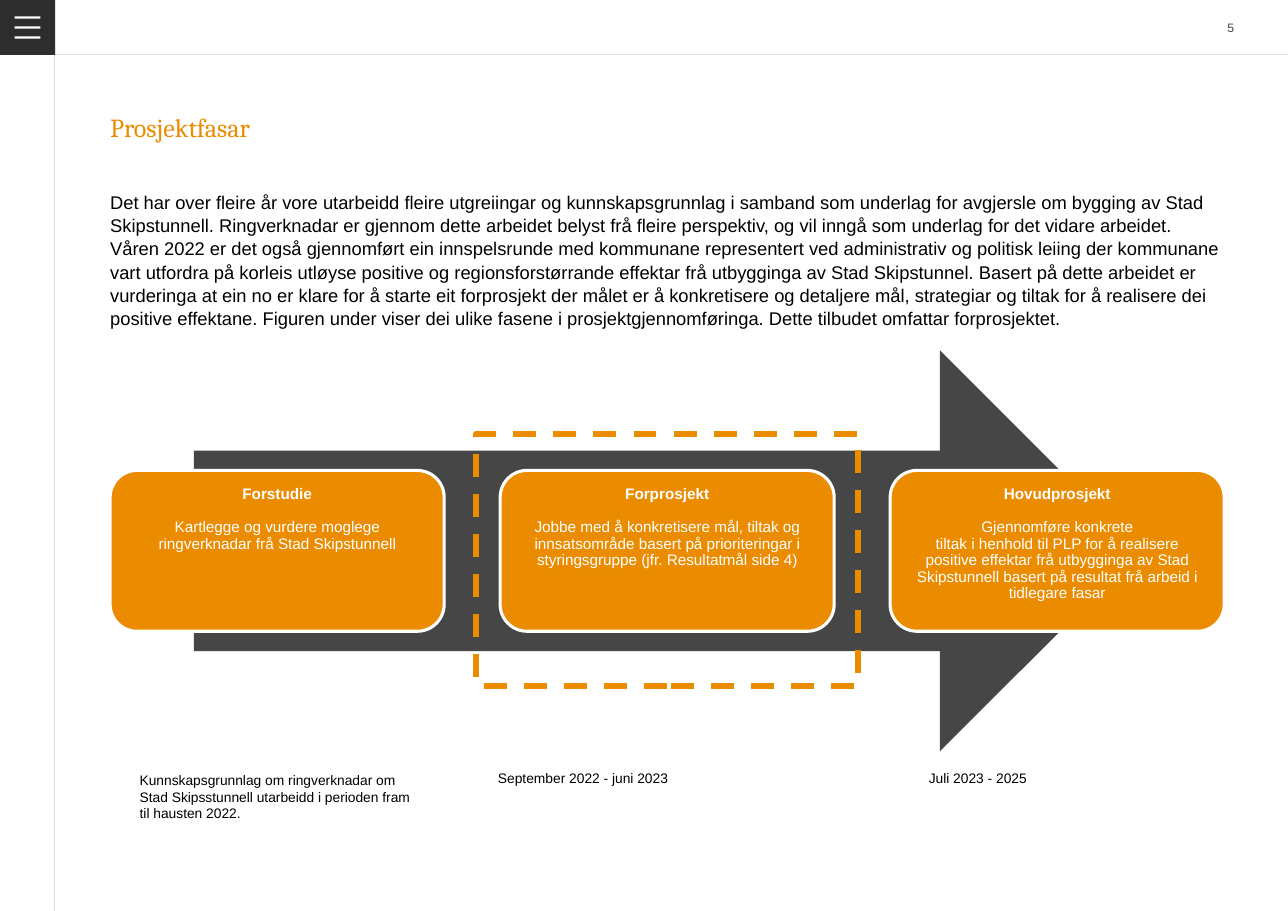
from lxml import etree
from pptx import Presentation
from pptx.dml.color import RGBColor
from pptx.enum.dml import MSO_LINE as Dash
from pptx.enum.shapes import MSO_CONNECTOR as Link, MSO_SHAPE as Form
from pptx.enum.text import MSO_ANCHOR as Anchor, PP_ALIGN as Align
from pptx.oxml.ns import qn
from pptx.util import Cm, Pt

COLORS = {"orange": "EB8C00", "gray": "464646", "dark": "2D2D2D",
          "rule": "DEDEDE", "white": "FFFFFF", "black": "000000"}
WIDE, HIGH = 29.69, 21.01
BAR = 1.27  # width of the menu square
LEFT, FULL = 2.54, 25.91  # main text column
STEP = 8.99  # distance between phase boxes

INTRO = [
    "Det har over fleire år vore utarbeidd fleire utgreiingar og kunnskapsgrunnlag "
    "i samband som underlag for avgjersle om bygging av Stad Skipstunnell. "
    "Ringverknadar er gjennom dette arbeidet belyst frå fleire perspektiv, og vil "
    "inngå som underlag for det vidare arbeidet.",
    "Våren 2022 er det også gjennomført ein innspelsrunde med kommunane "
    "representert ved administrativ og politisk leiing der kommunane vart utfordra "
    "på korleis utløyse positive og regionsforstørrande effektar frå utbygginga av "
    "Stad Skipstunnel. Basert på dette arbeidet er vurderinga at ein no er klare "
    "for å starte eit forprosjekt der målet er å konkretisere og detaljere mål, "
    "strategiar og tiltak for å realisere dei positive effektane. Figuren under "
    "viser dei ulike fasene i prosjektgjennomføringa. Dette tilbudet omfattar "
    "forprosjektet.",
]
PHASES = [
    ("Forstudie",
     ["Kartlegge og vurdere moglege ringverknadar frå Stad Skipstunnell"]),
    ("Forprosjekt",
     ["Jobbe med å konkretisere mål, tiltak og innsatsområde basert på "
      "prioriteringar i styringsgruppe (jfr. Resultatmål side 4)"]),
    ("Hovudprosjekt",
     ["Gjennomføre konkrete",
      "tiltak i henhold til PLP for å realisere positive effektar frå utbygginga "
      "av Stad Skipstunnell basert på resultat frå arbeid i tidlegare fasar"]),
]
DATES = [
    (2.97, 1.68, "Kunnskapsgrunnlag om ringverknadar om Stad Skipsstunnell "
                 "utarbeidd i perioden fram til hausten 2022."),
    (11.23, 0.89, "September 2022 - juni 2023"),
    (21.16, 0.89, "Juli 2023 - 2025"),
]


def rgb(name):
    return RGBColor.from_string(COLORS[name])


def write(frame, lines, size=12, font="Arial", color="black", align=Align.LEFT,
          space=1.0, pad=(0, 0), anchor=Anchor.TOP, head=False):
    """Fill a text frame; with head, the first line is a bold heading."""
    frame.word_wrap = True
    frame.vertical_anchor = anchor
    frame.margin_left = frame.margin_right = Cm(pad[0])
    frame.margin_top = frame.margin_bottom = Cm(pad[1])
    for i, line in enumerate(lines):
        para = frame.add_paragraph() if i else frame.paragraphs[0]
        para.alignment = align
        para.line_spacing = space
        if head and i == 1:
            para.space_before = Pt(size * 1.1)
        run = para.add_run()
        run.text = line
        run.font.size = Pt(size)
        run.font.name = font
        run.font.bold = head and i == 0
        run.font.color.rgb = rgb(color)


def label(slide, box, lines, **style):
    area = slide.shapes.add_textbox(*map(Cm, box))
    write(area.text_frame, lines, **style)


def shape(slide, form, box, fill=None, line=None, width=1):
    item = slide.shapes.add_shape(form, *map(Cm, box))
    item.shadow.inherit = False
    if fill:
        item.fill.solid()
        item.fill.fore_color.rgb = rgb(fill)
    else:
        item.fill.background()
    if line:
        item.line.color.rgb = rgb(line)
        item.line.width = Pt(width)
    else:
        item.line.fill.background()
    return item


def rule(slide, *ends):
    line = slide.shapes.add_connector(Link.STRAIGHT, *map(Cm, ends))
    line.line.color.rgb = rgb("rule")
    line.line.width = Pt(0.75)
    etree.SubElement(line._element.spPr, qn("a:effectLst"))


def frame_page(slide):
    """Draw the edge rules, the menu icon and the page number."""
    rule(slide, 0, 1.25, WIDE, 1.25)
    rule(slide, 1.25, 0, 1.25, HIGH)
    shape(slide, Form.RECTANGLE, (0, 0, BAR, BAR), "dark")
    for i in range(3):
        shape(slide, Form.RECTANGLE, (0.34, 0.38 + 0.23 * i, 0.59, 0.05), "white")
    label(slide, (27.18, 0, BAR, BAR), ["5"], size=8, color="gray",
          align=Align.RIGHT, anchor=Anchor.MIDDLE)


def phase(slide, left, title, body):
    box = shape(slide, Form.ROUNDED_RECTANGLE, (left, 10.85, 7.7, 3.71),
                "orange", "white", 2)
    box.adjustments[0] = 0.167
    write(box.text_frame, [title, *body], size=10, color="white",
          align=Align.CENTER, space=0.9, pad=(0.3, 0.18), head=True)


def main():
    deck = Presentation()
    deck.slide_width, deck.slide_height = Cm(WIDE), Cm(HIGH)
    slide = deck.slides.add_slide(deck.slide_layouts[6])
    frame_page(slide)
    label(slide, (LEFT, 2.54, FULL, 1.47), ["Prosjektfasar"], size=17,
          font="Cambria", color="orange", space=1.05)
    label(slide, (LEFT, 4.39, FULL, 3.91), INTRO, space=1.05)
    shape(slide, Form.RIGHT_ARROW, (4.47, 8.08, 21.82, 9.25), "gray")
    for i, (title, body) in enumerate(PHASES):
        phase(slide, LEFT + STEP * i, title, body)
    focus = shape(slide, Form.RECTANGLE, (10.97, 10.01, 8.81, 5.82),
                  line="orange", width=3.75)
    focus.line.dash_style = Dash.DASH
    for left, height, text in DATES:
        label(slide, (left, 17.55, 6.96, height), [text], size=9, pad=(0.25, 0.25))
    deck.save("out.pptx")


if __name__ == "__main__":
    main()
